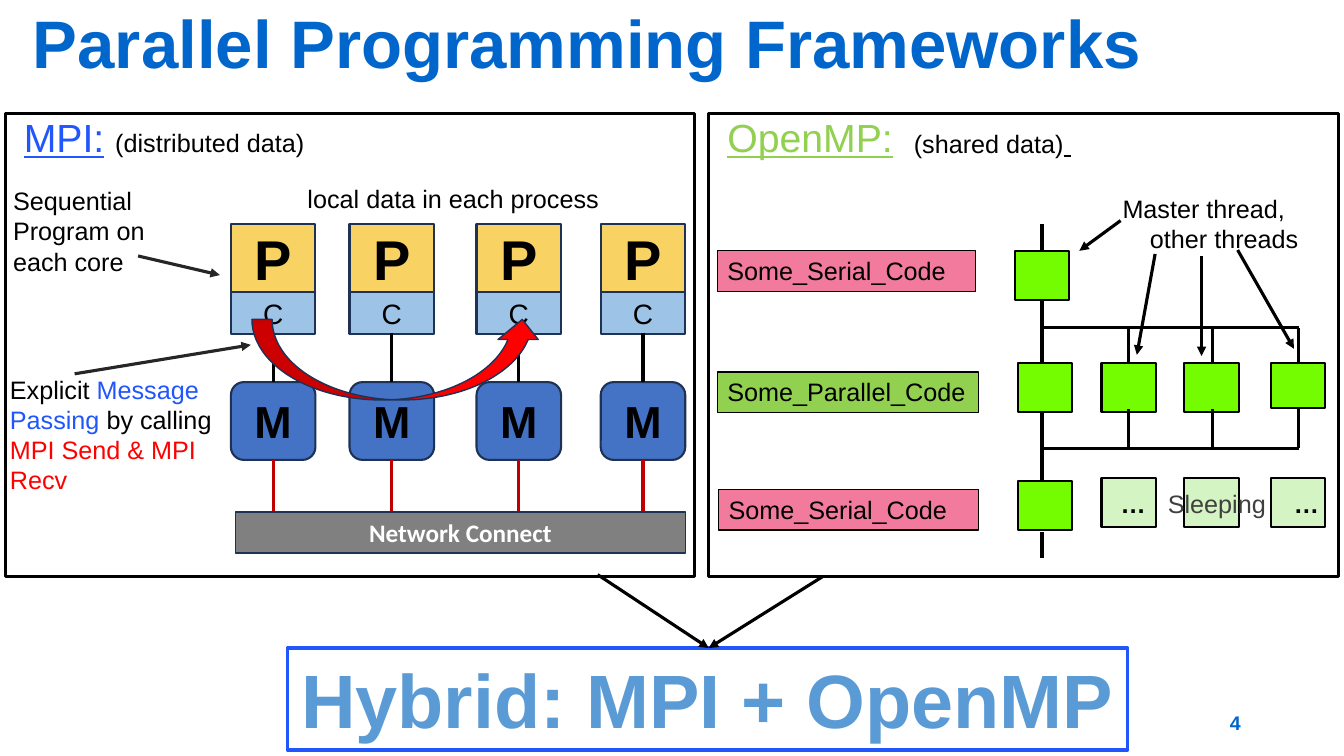
from lxml import etree
from pptx import Presentation
from pptx.dml.color import RGBColor
from pptx.enum.shapes import MSO_CONNECTOR, MSO_SHAPE
from pptx.enum.text import MSO_ANCHOR, PP_ALIGN
from pptx.oxml.ns import qn
from pptx.util import Cm, Pt

RECTANGLE = MSO_SHAPE.RECTANGLE
ROUNDED = MSO_SHAPE.ROUNDED_RECTANGLE
CURVED_ARROW = MSO_SHAPE.CURVED_UP_ARROW
STRAIGHT = MSO_CONNECTOR.STRAIGHT
LEFT, CENTER, RIGHT = PP_ALIGN.LEFT, PP_ALIGN.CENTER, PP_ALIGN.RIGHT
TOP, MIDDLE = MSO_ANCHOR.TOP, MSO_ANCHOR.MIDDLE

BLACK = RGBColor(0x00, 0x00, 0x00)
WHITE = RGBColor(0xFF, 0xFF, 0xFF)
CHARCOAL = RGBColor(0x26, 0x26, 0x26)
DARK_GRAY = RGBColor(0x40, 0x40, 0x40)
GRAY = RGBColor(0x80, 0x80, 0x80)
TITLE_BLUE = RGBColor(0x00, 0x66, 0xCC)
MPI_BLUE = RGBColor(0x20, 0x56, 0xFB)
HYBRID_BLUE = RGBColor(0x5B, 0x9B, 0xD5)
NAVY = RGBColor(0x1E, 0x32, 0x56)
PROCESS_YELLOW = RGBColor(0xF8, 0xD3, 0x63)
CORE_BLUE = RGBColor(0x9D, 0xC3, 0xE6)
MEMORY_BLUE = RGBColor(0x44, 0x72, 0xC4)
DARK_RED = RGBColor(0xC0, 0x00, 0x00)
RED = RGBColor(0xFF, 0x00, 0x00)
OPENMP_GREEN = RGBColor(0x92, 0xD0, 0x50)
THREAD_GREEN = RGBColor(0x73, 0xFD, 0x00)
SLEEPING_GREEN = RGBColor(0xD4, 0xF4, 0xC3)
SERIAL_PINK = RGBColor(0xF2, 0x7B, 0x9D)

PROCESS_LEFTS = (5.82, 8.81, 12.01, 15.14)
PROCESS_WIDTH = 2.13
THREAD_LEFTS = (25.65, 27.76, 29.85, 32.03)
THREAD_SIZE = (1.37, 1.24)
BRANCH_XS = (28.43, 30.56, 32.73)
TRUNK_X = 26.26


def write(shape, paragraphs, size=18, color=BLACK, bold=False, font="Arial",
          align=LEFT, anchor=TOP, wrap=True, spacing=None):
    frame = shape.text_frame
    frame.word_wrap = wrap
    frame.vertical_anchor = anchor
    for index, pieces in enumerate(paragraphs):
        paragraph = frame.add_paragraph() if index else frame.paragraphs[0]
        paragraph.alignment = align
        if spacing:
            paragraph.line_spacing = spacing
        for piece in pieces:
            text, style = piece if isinstance(piece, tuple) else (piece, {})
            run = paragraph.add_run()
            run.text = text
            run.font.name = style.get("font", font)
            run.font.size = Pt(style.get("size", size))
            run.font.bold = bold
            run.font.underline = style.get("underline", False)
            run.font.color.rgb = style.get("color", color)


def add_label(slide, box, paragraphs, **style):
    label = slide.shapes.add_textbox(*map(Cm, box))
    write(label, paragraphs, **style)
    return label


def add_box(slide, box, fill=None, line=BLACK, weight=1.5, kind=RECTANGLE,
            paragraphs=(), **style):
    shape = slide.shapes.add_shape(kind, *map(Cm, box))
    shape.shadow.inherit = False
    if fill is None:
        shape.fill.background()
    else:
        shape.fill.solid()
        shape.fill.fore_color.rgb = fill
    shape.line.color.rgb = line
    shape.line.width = Pt(weight)
    write(shape, paragraphs, **style)


def add_line(slide, start, end, color=BLACK, arrow=False):
    connector = slide.shapes.add_connector(STRAIGHT, *map(Cm, start + end))
    connector.line.color.rgb = color
    connector.line.width = Pt(2.25)
    if arrow:
        outline = connector.line._get_or_add_ln()
        etree.SubElement(outline, qn("a:tailEnd"), type="triangle")
    etree.SubElement(connector._element.spPr, qn("a:effectLst"))


def add_panel(slide, box, heading, color, note=()):
    pieces = [(" ", {"font": "Calibri"}),
              (heading, {"color": color, "underline": True}), *note]
    add_box(slide, box, weight=2.25, paragraphs=[pieces], size=28, spacing=0.9)


def add_process(slide, left):
    middle = left + PROCESS_WIDTH / 2
    parts = (("P", 5.64, 1.73, PROCESS_YELLOW, RECTANGLE, 40, True),
             ("C", 7.37, 1.04, CORE_BLUE, RECTANGLE, 20, False),
             ("M", 9.63, 1.96, MEMORY_BLUE, ROUNDED, 32, True))
    for letter, top, height, fill, kind, size, bold in parts:
        add_box(slide, (left, top, PROCESS_WIDTH, height), fill, NAVY, kind=kind,
                paragraphs=[[letter]], size=size, bold=bold, align=CENTER, anchor=MIDDLE)
    add_line(slide, (middle, 8.38), (middle, 9.63))
    add_line(slide, (middle, 11.6), (middle, 12.87), DARK_RED)


def add_mpi(slide):
    add_panel(slide, (0.13, 2.87, 17.37, 11.66), "MPI:", MPI_BLUE,
              [" ", ("(distributed data)", {"size": 18})])
    add_label(slide, (7.5, 4.49, 8.2, 1.02), [["local data in each process"]])
    for left in PROCESS_LEFTS:
        add_process(slide, left)
    add_box(slide, (5.94, 12.9, 11.33, 1.04), GRAY, NAVY, 1,
            paragraphs=[["Network Connect"]], color=WHITE, bold=True,
            font="Calibri", align=CENTER, anchor=MIDDLE)
    add_label(slide, (0.08, 4.55, 4.14, 2.57),
              [["Sequential"], ["Program on"], ["each core"]])
    add_label(slide, (0, 9.3, 5.64, 3.33),
              [["Explicit ", ("Message Passing ", {"color": MPI_BLUE}),
                "by calling ", ("MPI Send & MPI Recv", {"color": RED})]])
    add_line(slide, (3.48, 6.45), (5.54, 6.93), CHARCOAL, arrow=True)
    add_line(slide, (1.88, 9.42), (6.32, 8.69), CHARCOAL, arrow=True)
    add_box(slide, (6.35, 8.05, 7.32, 2.03), RED, NAVY, 1, CURVED_ARROW)


def add_threads(slide):
    add_box(slide, (25.58, 6.32, *THREAD_SIZE), THREAD_GREEN)
    for left in THREAD_LEFTS:
        height = 1.14 if left == THREAD_LEFTS[-1] else THREAD_SIZE[1]
        add_box(slide, (left, 9.14, THREAD_SIZE[0], height), THREAD_GREEN)
    add_box(slide, (THREAD_LEFTS[0], 12.12, *THREAD_SIZE), THREAD_GREEN)
    for left in THREAD_LEFTS[1:]:
        add_box(slide, (left, 12.05, *THREAD_SIZE), SLEEPING_GREEN)
    for top, bottom in ((5.64, 6.32), (7.54, 9.14), (10.41, 12.12), (13.41, 14.07)):
        add_line(slide, (TRUNK_X, top), (TRUNK_X, bottom))
    for fork_y in (8.26, 11.3):
        add_line(slide, (TRUNK_X, fork_y), (BRANCH_XS[-1], fork_y))
    for x in BRANCH_XS:
        add_line(slide, (x, 8.26), (x, 9.14))
        add_line(slide, (x, 10.3), (x, 11.3))
    for left, width, text, color, bold in ((27.99, 1.2, "…", BLACK, True),
                                           (29.18, 3.2, "Sleeping", DARK_GRAY, False),
                                           (32.36, 1.2, "…", BLACK, True)):
        add_label(slide, (left, 12.17, width, 1.02), [[text]], color=color, bold=bold)


def add_openmp(slide):
    add_panel(slide, (17.86, 2.87, 15.88, 11.66), "OpenMP:", OPENMP_GREEN)
    add_label(slide, (22.78, 3.1, 5, 1.02),
              [["(shared data)", (" ", {"underline": True})]])
    add_threads(slide)
    threads_label = add_label(slide, (28.04, 4.75, 5.5, 1.8),
                              [["Master thread,"], ["other threads"]])
    other_threads = threads_label.text_frame.paragraphs[1]
    other_threads._p.get_or_add_pPr().set("marL", str(Cm(0.69)))
    for start, end in (((28.24, 5.56), (27.2, 6.32)), ((29.11, 6.4), (28.65, 8.94)),
                       ((30.28, 6.45), (30.28, 8.97)), ((31.19, 6.3), (32.61, 8.79))):
        add_line(slide, start, end, arrow=True)
    for code, box, fill in (
            ("Some_Serial_Code", (18.08, 6.32, 6.5, 1.02), SERIAL_PINK),
            ("Some_Parallel_Code", (18.08, 9.37, 6.58, 1.02), OPENMP_GREEN),
            ("Some_Serial_Code", (18.11, 12.34, 6.55, 1.02), SERIAL_PINK)):
        add_box(slide, box, fill, weight=1, paragraphs=[[code]])


def add_hybrid(slide):
    add_box(slide, (7.24, 16.33, 21.18, 2.57), line=MPI_BLUE, weight=2.25,
            paragraphs=[["Hybrid: MPI + OpenMP"]], size=54, color=HYBRID_BLUE,
            bold=True, align=CENTER, wrap=False)
    for start in ((20.73, 14.53), (15.06, 14.48)):
        add_line(slide, start, (17.86, 16.33), arrow=True)


def main():
    presentation = Presentation()
    presentation.slide_width = Cm(33.87)
    presentation.slide_height = Cm(19.05)
    slide = presentation.slides.add_slide(presentation.slide_layouts[6])
    add_label(slide, (0.58, 0.33, 33.2, 1.7), [["Parallel Programming Frameworks"]],
              size=48, color=TITLE_BLUE, bold=True, anchor=MIDDLE, spacing=0.9)
    add_mpi(slide)
    add_openmp(slide)
    add_hybrid(slide)
    add_label(slide, (23.9, 17.7, 7.62, 1.02), [["4"]], size=14,
              color=TITLE_BLUE, bold=True, align=RIGHT, anchor=MIDDLE)
    presentation.save("out.pptx")


if __name__ == "__main__":
    main()
